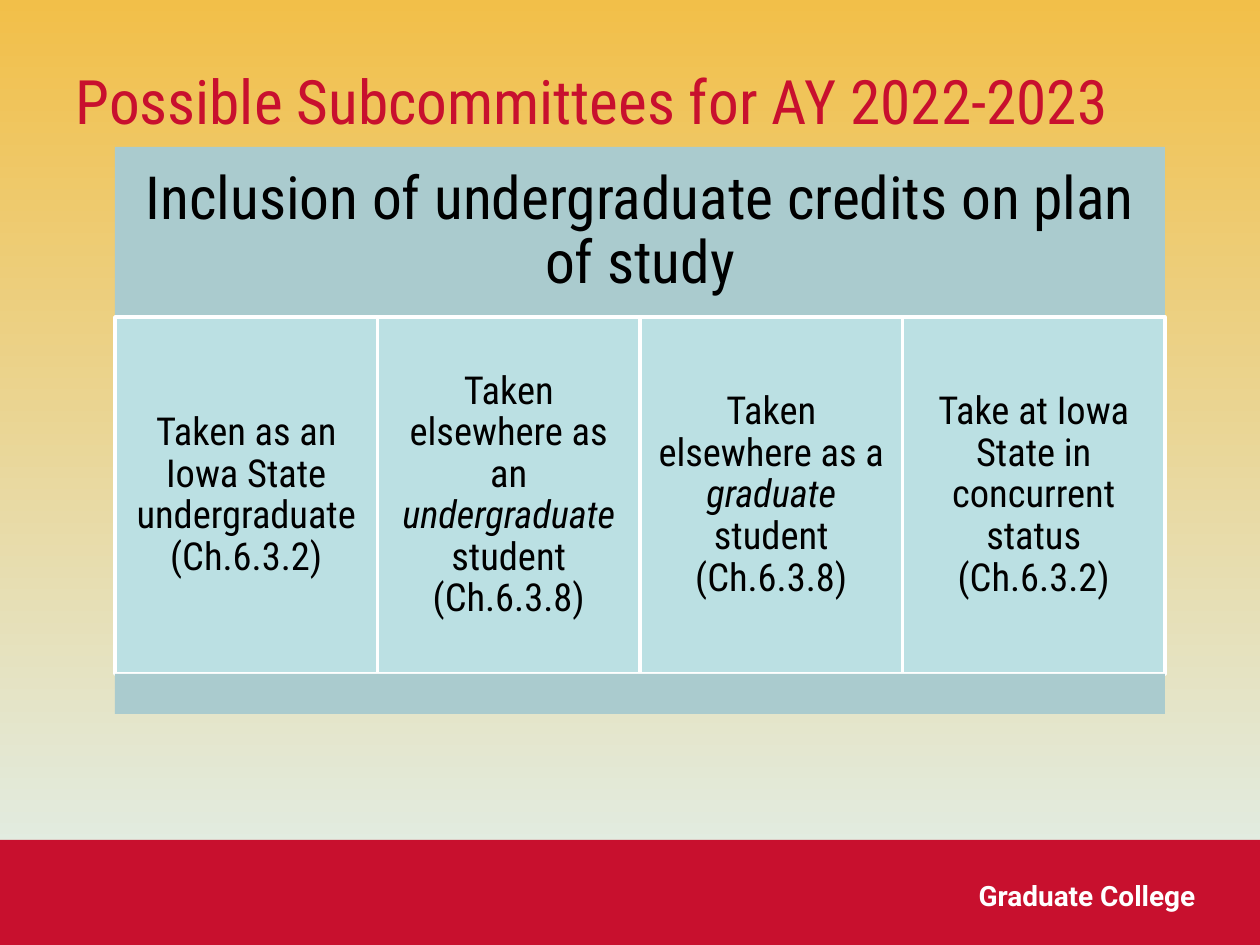
from pptx import Presentation
from pptx.dml.color import RGBColor
from pptx.enum.shapes import MSO_SHAPE
from pptx.enum.text import MSO_ANCHOR, MSO_AUTO_SIZE, PP_ALIGN
from pptx.util import Pt
from lxml import etree

RECT = MSO_SHAPE.RECTANGLE
TOP, MIDDLE = MSO_ANCHOR.TOP, MSO_ANCHOR.MIDDLE
LEFT, CENTER, RIGHT = PP_ALIGN.LEFT, PP_ALIGN.CENTER, PP_ALIGN.RIGHT
NO_AUTOFIT = MSO_AUTO_SIZE.NONE
DRAWING_NS = "http://schemas.openxmlformats.org/drawingml/2006/main"

PX = 914400 / 126
SLIDE_W, SLIDE_H = 1260, 945
CONDENSED = "Roboto Condensed"
COLORS = {
    "red": "C8102E",
    "gold": "F2BF49",
    "mist": "E0F1F2",
    "header": "AACBCE",
    "cell": "BBE0E3",
    "white": "FFFFFF",
    "black": "000000",
}

# Each cell is a list of (text, italic) runs
CREDIT_CASES = [
    [("Taken as an Iowa State undergraduate (Ch.6.3.2)", False)],
    [("Taken elsewhere as an ", False), ("undergraduate ", True),
     ("student (Ch.6.3.8)", False)],
    [("Taken elsewhere as a ", False), ("graduate", True),
     (" student (Ch.6.3.8)", False)],
    [("Take at Iowa State in concurrent status (Ch.6.3.2)", False)],
]


def emu(px):
    return round(px * PX)


def color(name):
    return RGBColor.from_string(COLORS[name])


def place(shape, left, top, width, height):
    shape.left, shape.top = emu(left), emu(top)
    shape.width, shape.height = emu(width), emu(height)


def write_text(shape, runs, size, ink="black", font=CONDENSED, bold=False,
               align=CENTER, anchor=MIDDLE, inset=None, spacing=None):
    frame = shape.text_frame
    frame.word_wrap = True
    frame.auto_size = NO_AUTOFIT
    frame.vertical_anchor = anchor
    if inset is not None:
        frame.margin_left = frame.margin_right = emu(inset)
        frame.margin_top = frame.margin_bottom = emu(inset)
    paragraph = frame.paragraphs[0]
    paragraph.alignment = align
    paragraph.space_before = Pt(0)
    if spacing:
        paragraph.line_spacing = spacing
    for text, italic in runs:
        run = paragraph.add_run()
        run.text = text
        run.font.name, run.font.size = font, Pt(size)
        run.font.bold, run.font.italic = bold, italic
        run.font.color.rgb = color(ink)


def add_block(shapes, box, fill, line=None):
    block = shapes.add_shape(RECT, *map(emu, box))
    block.shadow.inherit = False
    block.fill.solid()
    block.fill.fore_color.rgb = color(fill)
    if line:
        block.line.color.rgb = color(line)
        block.line.width = Pt(2)
    else:
        block.line.fill.background()
    return block


def paint_background(slide):
    fill = slide.background.fill
    fill.gradient()
    fill.gradient_angle = 270
    for stop, name, position in zip(fill.gradient_stops, ("gold", "mist"), (0, 1)):
        stop.color.rgb = color(name)
        stop.position = position


def add_title(slide, box):
    title = slide.shapes.title
    place(title, *box)
    write_text(title, [("Possible Subcommittees for AY 2022-2023", False)],
               size=35, ink="red", align=LEFT)


def add_footer(slide, box):
    left, top, width, height = box
    band = add_block(slide.shapes, box, "red")
    # The band lies behind the placeholders
    slide.shapes._spTree.insert(2, band._element)

    college = slide.placeholders[1]
    place(college, left + width - 388, top + 32, 336, 52)
    properties = college.text_frame.paragraphs[0]._p.get_or_add_pPr()
    properties.set("marL", "0")
    properties.set("indent", "0")
    etree.SubElement(properties, f"{{{DRAWING_NS}}}buNone")
    write_text(college, [("Graduate College", False)], size=16, ink="white",
               font="Roboto", bold=True, align=RIGHT, anchor=TOP)


def add_credit_panel(slide, box):
    left, top, width, height = box
    header_h, base_h = 170, 40
    cell_h = height - header_h - base_h
    cell_w = width / len(CREDIT_CASES)
    panel = slide.shapes.add_group_shape().shapes

    # Heading
    heading = add_block(panel, (left, top, width, header_h), "header")
    write_text(heading,
               [("Inclusion of undergraduate credits on plan of study", False)],
               size=34, inset=18, spacing=0.9)

    # Row of cases
    for column, runs in enumerate(CREDIT_CASES):
        case = add_block(panel, (left + column * cell_w, top + header_h,
                                 cell_w, cell_h), "cell", line="white")
        write_text(case, runs, size=22, inset=11, spacing=0.9)

    # Base strip
    add_block(panel, (left, top + height - base_h, width, base_h), "header")


def main():
    deck = Presentation()
    deck.slide_width, deck.slide_height = emu(SLIDE_W), emu(SLIDE_H)
    slide = deck.slides.add_slide(deck.slide_layouts[1])
    paint_background(slide)
    add_title(slide, (63, 21, 1155, 158))
    add_footer(slide, (0, 840, SLIDE_W, 105))
    add_credit_panel(slide, (115, 147, 1050, 567))
    deck.save("out.pptx")


if __name__ == "__main__":
    main()
